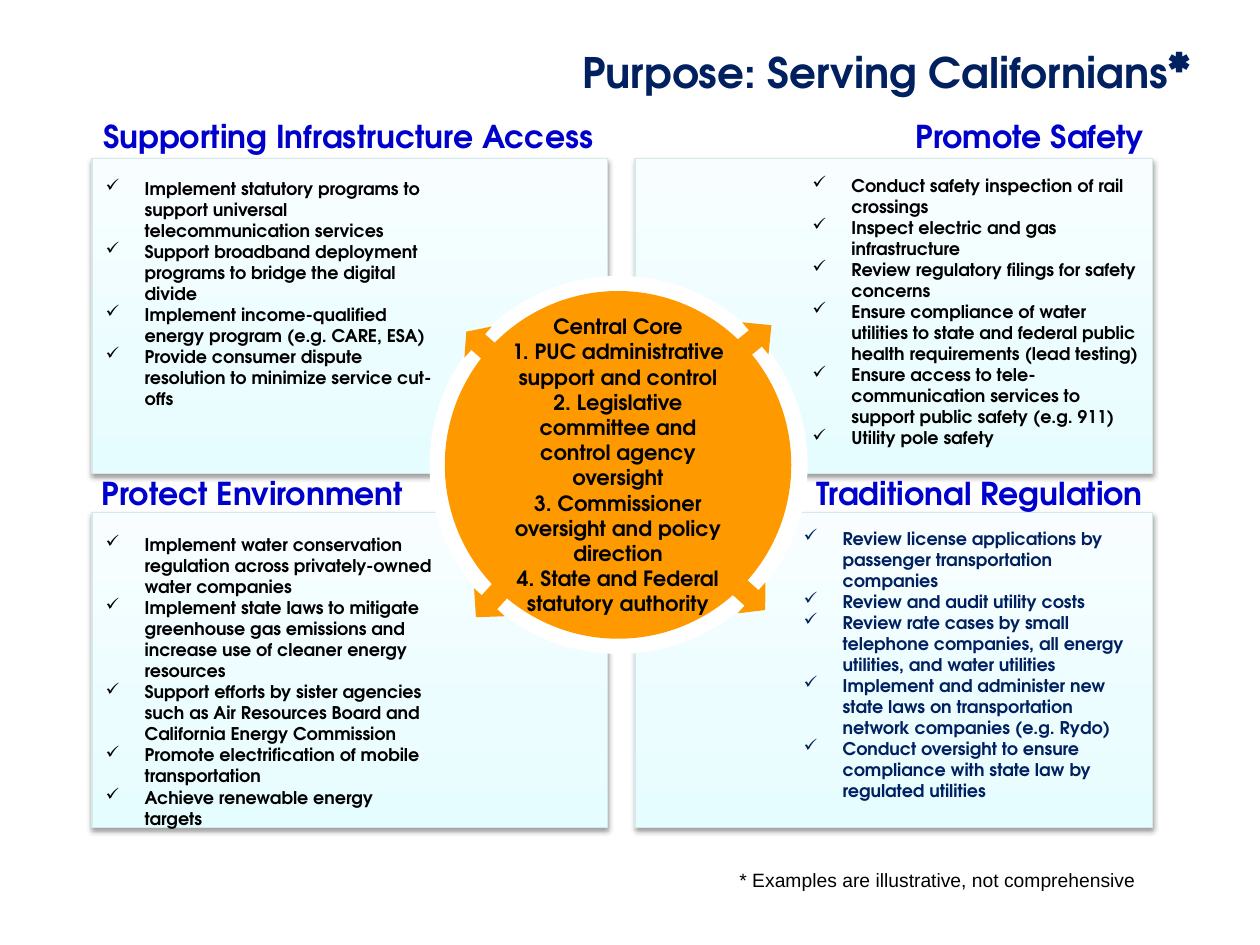
from copy import deepcopy
from dataclasses import dataclass

from lxml.etree import SubElement
from pptx import Presentation
from pptx.dml.color import RGBColor
from pptx.enum.shapes import MSO_SHAPE
from pptx.enum.text import MSO_ANCHOR, MSO_AUTO_SIZE, PP_ALIGN
from pptx.oxml.ns import qn
from pptx.util import Inches, Pt


@dataclass(frozen=True)
class Theme:
    font: str = "TeX Gyre Adventor"
    note_font: str = "Arial"
    navy: RGBColor = RGBColor.from_string("002060")
    blue: RGBColor = RGBColor.from_string("0000CC")
    black: RGBColor = RGBColor.from_string("000000")
    white: RGBColor = RGBColor.from_string("FFFFFF")
    orange: RGBColor = RGBColor.from_string("FF9900")
    panel_line: RGBColor = RGBColor.from_string("D5E8EA")
    panel_stops: tuple = ((0, "E6FDFF"), (0.35, "ECFDFF"), (1, "F8FEFF"))
    title_size: Pt = Pt(24)
    star_size: Pt = Pt(28)
    heading_size: Pt = Pt(18)
    core_size: Pt = Pt(12)
    note_size: Pt = Pt(11)
    list_size: Pt = Pt(10)


theme = Theme()


def write_lines(shape, lines, size, color, align=PP_ALIGN.LEFT, bullet=None, font=theme.font, bold=True):
    frame = shape.text_frame
    frame.word_wrap = True
    frame.text = "\n".join(lines)
    for para in frame.paragraphs:
        para.alignment = align
        if bullet:
            properties = para._p.get_or_add_pPr()
            properties.set("marL", str(Inches(0.31)))
            properties.set("indent", str(-Inches(0.31)))
            SubElement(properties, qn("a:buChar"), char=bullet)
        for span in para.runs:
            span.font.name = font
            span.font.size = size
            span.font.bold = bold
            span.font.color.rgb = color


def add_solid(kind, left, top, width, height, color):
    shape = page.shapes.add_shape(kind, Inches(left), Inches(top), Inches(width), Inches(height))
    shape.shadow.inherit = False
    shape.fill.solid()
    shape.fill.fore_color.rgb = color
    shape.line.fill.background()
    return shape


deck = Presentation()
deck.slide_width = Inches(10)
deck.slide_height = Inches(7.5)
page = deck.slides.add_slide(deck.slide_layouts[5])

title = page.shapes.title
title.left, title.top, title.width, title.height = Inches(4.08), Inches(0), Inches(5.92), Inches(0.83)
title.fill.solid()
title.fill.fore_color.rgb = theme.white
write_lines(title, ["Purpose: Serving Californians"], theme.title_size, theme.navy, PP_ALIGN.CENTER)
title.text_frame.vertical_anchor = MSO_ANCHOR.BOTTOM
title.text_frame.auto_size = MSO_AUTO_SIZE.NONE
star = title.text_frame.paragraphs[0].add_run()
star.text = "*"
star.font.name = theme.font
star.font.size = theme.star_size
star.font.bold = True
star.font.color.rgb = theme.navy

for top in (1.26, 4.07):
    for left, width in ((0.73, 4.09), (5.04, 4.11)):
        panel = add_solid(MSO_SHAPE.RECTANGLE, left, top, width, 2.5, theme.white)
        panel.line.color.rgb = theme.panel_line
        panel.line.width = Pt(0.75)
        panel.fill.gradient()
        panel.fill.gradient_angle = 90
        stop_list = panel._element.spPr.find(".//" + qn("a:gsLst"))
        stop_list.insert(1, deepcopy(stop_list[0]))
        for stop, (position, color) in zip(panel.fill.gradient_stops, theme.panel_stops):
            stop.position = position
            stop.color.rgb = RGBColor.from_string(color)
        effects = panel._element.spPr.find(qn("a:effectLst"))
        shadow = SubElement(effects, qn("a:outerShdw"), blurRad=str(Pt(3.1)), dist=str(Pt(1.6)),
                            dir="5400000", rotWithShape="0")
        shadow_color = SubElement(shadow, qn("a:srgbClr"), val=str(theme.black))
        SubElement(shadow_color, qn("a:alpha"), val="38000")

add_solid(MSO_SHAPE.OVAL, 3.41, 2.19, 3, 3, theme.white)
core = add_solid(MSO_SHAPE.OVAL, 3.53, 2.31, 2.75, 2.76, theme.orange)
core.text_frame.vertical_anchor = MSO_ANCHOR.MIDDLE
write_lines(core, [
    "Central Core",
    "1. PUC administrative support and control",
    "2. Legislative committee and control agency oversight",
    "3. Commissioner oversight and policy direction",
    "4. State and Federal statutory authority",
], theme.core_size, theme.black, PP_ALIGN.CENTER)

headings = [
    ("Supporting Infrastructure Access", 0.72, 0.88, 4.17, PP_ALIGN.LEFT),
    ("Promote Safety", 5.07, 0.88, 4.11, PP_ALIGN.RIGHT),
    ("Protect Environment", 0.71, 3.71, 2.69, PP_ALIGN.LEFT),
    ("Traditional Regulation", 6.35, 3.71, 2.82, PP_ALIGN.RIGHT),
]
for text, left, top, width, align in headings:
    box = page.shapes.add_textbox(Inches(left), Inches(top), Inches(width), Inches(0.4))
    write_lines(box, [text], theme.heading_size, theme.blue, align)

lists = [
    (0.74, 1.36, 1.95, theme.black, [
        "Implement statutory programs to support universal telecommunication services",
        "Support broadband deployment programs to bridge the digital divide",
        "Implement income-qualified energy program (e.g. CARE, ESA)",
        "Provide consumer dispute resolution to minimize service cut-offs",
    ]),
    (6.35, 1.34, 2.29, theme.black, [
        "Conduct safety inspection of rail crossings",
        "Inspect electric and gas infrastructure",
        "Review regulatory filings for safety concerns",
        "Ensure compliance of water utilities to state and federal public health requirements (lead testing)",
        "Ensure access to tele-communication services to support public safety (e.g. 911)",
        "Utility pole safety",
    ]),
    (0.74, 4.19, 2.46, theme.black, [
        "Implement water conservation regulation across privately-owned water companies",
        "Implement state laws to mitigate greenhouse gas emissions and increase use of cleaner energy resources",
        "Support efforts by sister agencies such as Air Resources Board and California Energy Commission",
        "Promote electrification of mobile transportation",
        "Achieve renewable energy targets",
    ]),
    (6.28, 4.14, 2.46, theme.navy, [
        "Review license applications by passenger transportation companies",
        "Review and audit utility costs",
        "Review rate cases by small telephone companies, all energy utilities, and water utilities",
        "Implement and administer new state laws on transportation network companies (e.g. Rydo)",
        "Conduct oversight to ensure compliance with state law by regulated utilities",
    ]),
]
for left, top, height, color, items in lists:
    box = page.shapes.add_textbox(Inches(left), Inches(top), Inches(2.8), Inches(height))
    write_lines(box, items, theme.list_size, color, bullet="✓")

arrows = [
    (3.63, 2.59, 0.25, 131.3),
    (3.72, 4.62, 0.32, 42.2),
    (5.8, 4.6, 0.29, 311.9),
    (5.83, 2.52, 0.33, 230.7),
]
for left, top, height, angle in arrows:
    arrow = add_solid(MSO_SHAPE.DOWN_ARROW, left, top, 0.33, height, theme.orange)
    arrow.rotation = angle

note = page.shapes.add_textbox(Inches(5.77), Inches(6.84), Inches(3.48), Inches(0.29))
write_lines(note, ["* Examples are illustrative, not comprehensive"], theme.note_size, theme.black,
            font=theme.note_font, bold=False)

deck.save("out.pptx")
